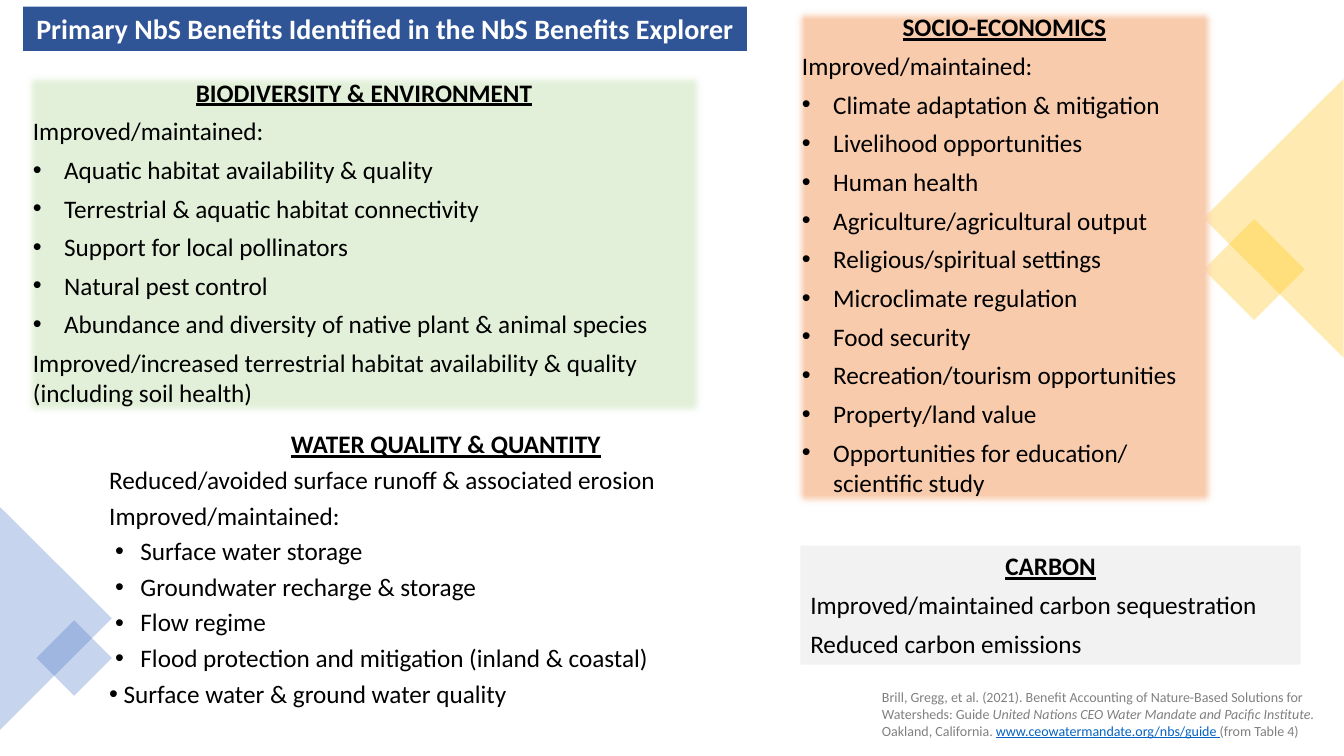
"""Build the slide of primary NbS benefits on a grid of 160 columns by 90 rows."""
from dataclasses import dataclass
from typing import Optional

from lxml import etree
from pptx import Presentation
from pptx import util as u
from pptx.dml import color
from pptx.enum import shapes, text
from pptx.oxml import ns

COLUMNS, ROWS = 160, 90
CELL = u.Inches(1) / 12
COLOURS = {
    "white": "FFFFFF", "black": "000000", "navy": "2F5597", "green": "E2F0D9",
    "orange": "F8CBAD", "pale": "F2F2F2", "grey": "808080", "link": "0563C1",
    "gold": "FFC000", "blue": "4472C4",
}


@dataclass(frozen=True)
class Area:
    column: float
    row: float
    columns: float
    rows: float

    def lengths(self) -> list[u.Emu]:
        return [u.Emu(round(cells * CELL))
                for cells in (self.column, self.row, self.columns, self.rows)]


@dataclass(frozen=True)
class Ornament:
    area: Area
    outline: shapes.MSO_SHAPE
    turn: float
    colour: str


@dataclass(frozen=True)
class Phrase:
    wording: str
    colour: str = "black"
    bold: bool = False
    italic: bool = False
    underline: bool = False


@dataclass(frozen=True)
class Line:
    phrases: tuple[Phrase, ...]
    centred: bool = False
    bullet: Optional[tuple[float, float]] = None


@dataclass(frozen=True)
class Panel:
    area: Area
    lines: list[Line]
    fill: Optional[str] = None
    size: float = 18
    spacing: Optional[float] = None
    soft: bool = False


def heading(wording: str) -> Line:
    return Line((Phrase(wording, bold=True, underline=True),), centred=True)


def plain(*wordings: str) -> list[Line]:
    return [Line((Phrase(wording),)) for wording in wordings]


def bullets(*wordings: str, left: float = 0.31, hang: float = -0.31) -> list[Line]:
    return [Line((Phrase(wording),), bullet=(left, hang)) for wording in wordings]


SQUARE, TRIANGLE = shapes.MSO_SHAPE.RECTANGLE, shapes.MSO_SHAPE.ISOSCELES_TRIANGLE

ORNAMENTS = [
    Ornament(Area(145.05, 27.82, 8.52, 8.52), SQUARE, 45, "gold"),
    Ornament(Area(135, 17.64, 33.24, 16.68), TRIANGLE, 270, "gold"),
    Ornament(Area(-6.6, 66.96, 26.52, 13.32), TRIANGLE, 90, "blue"),
    Ornament(Area(5.64, 75.16, 6.36, 6.36), SQUARE, 45, "blue"),
]

WATER = Panel(
    Area(11.82, 50.84, 82.5, 38.28),
    [heading("WATER QUALITY & QUANTITY"),
     *plain("Reduced/avoided surface runoff & associated erosion",
            "Improved/maintained:"),
     *bullets("Surface water storage", "Groundwater recharge & storage", "Flow regime",
              "Flood protection and mitigation (inland & coastal)", hang=-0.25),
     *bullets(" Surface water & ground water quality", left=0, hang=-0.25)],
    spacing=0.9)

CITATION = Panel(
    Area(103.82, 81.36, 55.44, 7.32),
    [Line((Phrase("Brill, Gregg, et al. (2021). Benefit Accounting of Nature-Based "
                  "Solutions for Watersheds: Guide ", "grey"),
           Phrase("United Nations CEO Water Mandate and Pacific Institute", "grey",
                  italic=True),
           Phrase(". Oakland, California. ", "grey"),
           Phrase("www.ceowatermandate.org/nbs/guide ", "link", underline=True),
           Phrase("(from Table 4)", "grey")))],
    size=10)

TITLE = Panel(
    Area(2.76, 0.8, 86.16, 5.28),
    [Line((Phrase("Primary NbS Benefits Identified in the NbS Benefits Explorer",
                  "white", bold=True),), centred=True)],
    fill="navy", size=20)

BIODIVERSITY = Panel(
    Area(2.74, 8.56, 81.18, 41.04),
    [heading("BIODIVERSITY & ENVIRONMENT"),
     *plain("Improved/maintained:"),
     *bullets("Aquatic habitat availability & quality",
              "Terrestrial & aquatic habitat connectivity",
              "Support for local pollinators", "Natural pest control",
              "Abundance and diversity of native plant & animal species"),
     *plain("Improved/increased terrestrial habitat availability & quality "
            "(including soil health)")],
    fill="green", soft=True)

SOCIO_ECONOMICS = Panel(
    Area(94.3, 0.8, 50.54, 59.58),
    [heading("SOCIO-ECONOMICS"),
     *plain("Improved/maintained:"),
     *bullets("Climate adaptation & mitigation", "Livelihood opportunities",
              "Human health", "Agriculture/agricultural output",
              "Religious/spiritual settings", "Microclimate regulation",
              "Food security", "Recreation/tourism opportunities",
              "Property/land value", "Opportunities for education/ scientific study")],
    fill="orange", soft=True)

CARBON = Panel(
    Area(95.28, 64.96, 59.56, 14.16),
    [heading("CARBON"),
     *plain("Improved/maintained carbon sequestration", "Reduced carbon emissions")],
    fill="pale")


def rgb(name: str) -> color.RGBColor:
    return color.RGBColor.from_string(COLOURS[name])


def draw_shape(slide, area: Area, outline: shapes.MSO_SHAPE, fill: str):
    shape = slide.shapes.add_shape(outline, *area.lengths())
    shape.shadow.inherit = False
    shape.fill.solid()
    shape.fill.fore_color.rgb = rgb(fill)
    shape.line.fill.background()
    return shape


def draw_ornament(slide, ornament: Ornament) -> None:
    shape = draw_shape(slide, ornament.area, ornament.outline, ornament.colour)
    shape.rotation = ornament.turn
    tint = shape._element.spPr.find(f"{ns.qn('a:solidFill')}/{ns.qn('a:srgbClr')}")
    etree.SubElement(tint, ns.qn("a:alpha"), val="30000")


def write_line(paragraph, line: Line, panel: Panel) -> None:
    if line.bullet:
        properties = paragraph._p.get_or_add_pPr()
        for key, inches in zip(("marL", "indent"), line.bullet):
            properties.set(key, str(u.Inches(inches)))
        etree.SubElement(properties, ns.qn("a:buFont"), typeface="Arial")
        etree.SubElement(properties, ns.qn("a:buChar"), char="•")
    paragraph.alignment = text.PP_ALIGN.CENTER if line.centred else text.PP_ALIGN.LEFT
    paragraph.space_after = u.Pt(6)
    if panel.spacing:
        paragraph.line_spacing = panel.spacing
    for phrase in line.phrases:
        run = paragraph.add_run()
        run.text = phrase.wording
        run.font.name, run.font.size = "Calibri", u.Pt(panel.size)
        run.font.bold, run.font.italic = phrase.bold, phrase.italic
        run.font.underline = phrase.underline
        run.font.color.rgb = rgb(phrase.colour)


def draw_panel(slide, panel: Panel) -> None:
    if panel.fill:
        box = draw_shape(slide, panel.area, SQUARE, panel.fill)
    else:
        box = slide.shapes.add_textbox(*panel.area.lengths())
    if panel.soft:
        effects = box._element.spPr.find(ns.qn("a:effectLst"))
        etree.SubElement(effects, ns.qn("a:softEdge"), rad=str(u.Pt(5)))
    frame = box.text_frame
    frame.word_wrap = True
    frame.vertical_anchor = text.MSO_ANCHOR.TOP
    for index, line in enumerate(panel.lines):
        write_line(frame.add_paragraph() if index else frame.paragraphs[0], line, panel)


def main() -> None:
    deck = Presentation()
    deck.slide_width, deck.slide_height = round(COLUMNS * CELL), round(ROWS * CELL)
    slide = deck.slides.add_slide(deck.slide_layouts[6])
    slide.background.fill.solid()
    slide.background.fill.fore_color.rgb = rgb("white")
    draw_panel(slide, WATER)
    for ornament in ORNAMENTS:
        draw_ornament(slide, ornament)
    for panel in (CITATION, TITLE, BIODIVERSITY, SOCIO_ECONOMICS, CARBON):
        draw_panel(slide, panel)
    deck.save("out.pptx")


if __name__ == "__main__":
    main()
